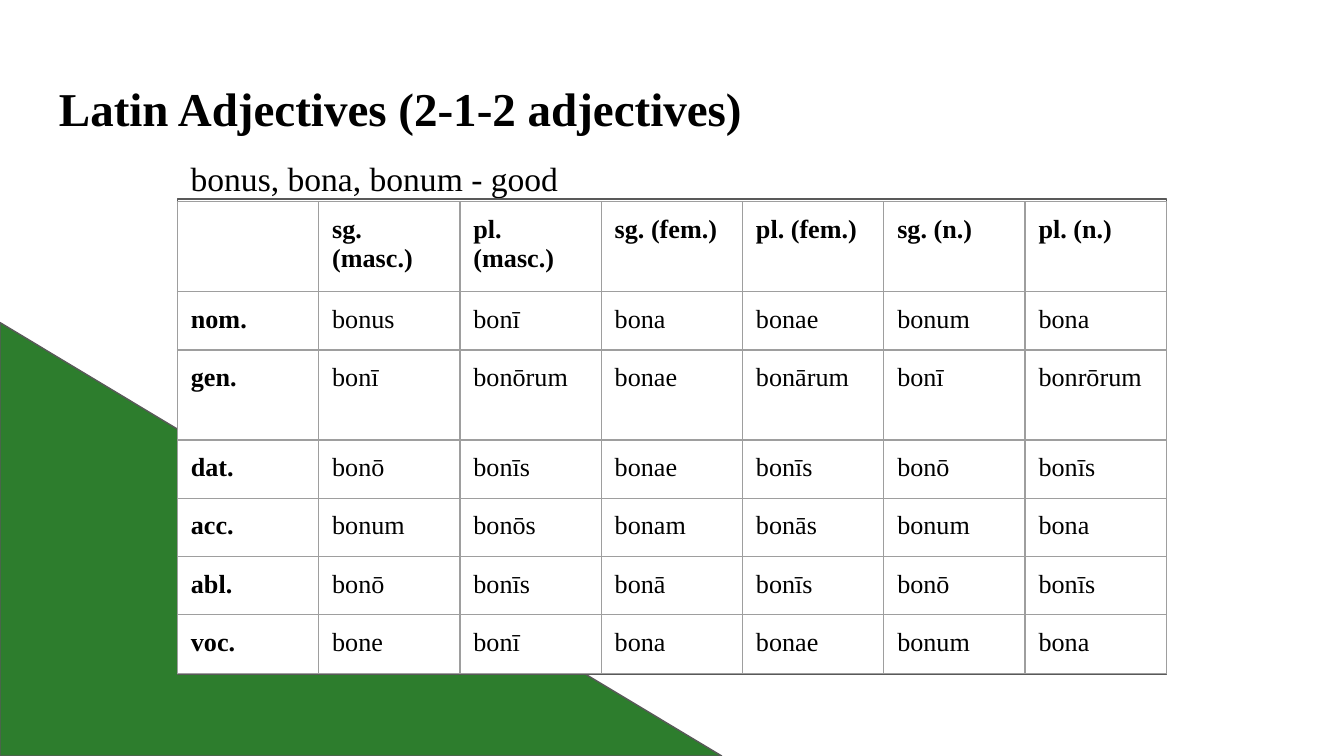
from lxml.etree import SubElement
from pptx import Presentation
from pptx.dml.color import RGBColor
from pptx.enum.shapes import MSO_SHAPE as Shape
from pptx.enum.text import MSO_ANCHOR as Anchor
from pptx.oxml.ns import qn
from pptx.util import Inches, Pt

COLORS = {"green": "2D7D2D", "white": "FFFFFF", "outline": "595959",
          "grid": "9E9E9E", "text": "000000"}
FONT = "Times New Roman"
SLIDE_WIDTH = 10
SLIDE_HEIGHT = SLIDE_WIDTH * 9 / 16
PADDING = 0.1
LINE_WIDTH = 0.75
ROW_HEIGHTS = [0.67, 0.43, 0.67, 0.43, 0.43, 0.43, 0.43]
DECLENSION = [
    ["", "sg. (masc.)", "pl. (masc.)", "sg. (fem.)", "pl. (fem.)", "sg. (n.)", "pl. (n.)"],
    ["nom.", "bonus", "bonī", "bona", "bonae", "bonum", "bona"],
    ["gen.", "bonī", "bonōrum", "bonae", "bonārum", "bonī", "bonrōrum"],
    ["dat.", "bonō", "bonīs", "bonae", "bonīs", "bonō", "bonīs"],
    ["acc.", "bonum", "bonōs", "bonam", "bonās", "bonum", "bona"],
    ["abl.", "bonō", "bonīs", "bonā", "bonīs", "bonō", "bonīs"],
    ["voc.", "bone", "bonī", "bona", "bonae", "bonum", "bona"],
]


def color(key):
    """Return the named colour."""
    return RGBColor.from_string(COLORS[key])


def write_text(frame, text, size=14, bold=False, line_spacing=1.0, space_after=0):
    """Write one formatted paragraph into a text frame."""
    frame.word_wrap = True
    paragraph = frame.paragraphs[0]
    paragraph.line_spacing = line_spacing
    paragraph.space_after = Pt(space_after)
    run = paragraph.add_run()
    run.text = text
    run.font.name = FONT
    run.font.size = Pt(size)
    run.font.bold = bold
    run.font.color.rgb = color("text")


def set_padding(holder):
    """Give a text frame or table cell equal margins."""
    holder.margin_left = holder.margin_right = Inches(PADDING)
    holder.margin_top = holder.margin_bottom = Inches(PADDING)


def add_panel(slide, kind, box, fill):
    """Draw an outlined, filled shape."""
    panel = slide.shapes.add_shape(kind, *map(Inches, box))
    panel.shadow.inherit = False
    panel.fill.solid()
    panel.fill.fore_color.rgb = color(fill)
    panel.line.color.rgb = color("outline")
    panel.line.width = Pt(LINE_WIDTH)


def add_label(slide, box, text, anchor=Anchor.TOP, **text_format):
    """Place a text box."""
    frame = slide.shapes.add_textbox(*map(Inches, box)).text_frame
    frame.vertical_anchor = anchor
    set_padding(frame)
    write_text(frame, text, **text_format)


def add_borders(cell):
    """Give a table cell a thin line on every side."""
    properties = cell._tc.get_or_add_tcPr()
    for side in ("lnL", "lnR", "lnT", "lnB"):
        border = SubElement(properties, qn(f"a:{side}"), w=str(Pt(LINE_WIDTH)))
        fill = SubElement(border, qn("a:solidFill"))
        SubElement(fill, qn("a:srgbClr"), val=COLORS["grid"])


def add_declension(slide, box):
    """Place the declension table on a white panel filling the box."""
    left, top, width, height = box
    add_panel(slide, Shape.RECTANGLE, box, "white")
    column_count = len(DECLENSION[0])
    table = slide.shapes.add_table(
        len(DECLENSION), column_count, Inches(left), Inches(top + 0.02),
        Inches(width), Inches(sum(ROW_HEIGHTS))).table
    for column in table.columns:
        column.width = Inches(width / column_count)
    for row, row_height in zip(table.rows, ROW_HEIGHTS):
        row.height = Inches(row_height)
    for row_index, forms in enumerate(DECLENSION):
        for column_index, form in enumerate(forms):
            cell = table.cell(row_index, column_index)
            add_borders(cell)
            cell.fill.background()
            set_padding(cell)
            if form:
                write_text(cell.text_frame, form,
                           bold=row_index == 0 or column_index == 0)


def main():
    """Build and save the slide."""
    deck = Presentation()
    deck.slide_width, deck.slide_height = Inches(SLIDE_WIDTH), Inches(SLIDE_HEIGHT)
    slide = deck.slides.add_slide(deck.slide_layouts[6])
    add_panel(slide, Shape.RIGHT_TRIANGLE, (0, 2.4, 5.37, SLIDE_HEIGHT - 2.4), "green")
    add_label(slide, (0.34, 0.49, 9.32, 0.63), "Latin Adjectives (2-1-2 adjectives)",
              anchor=Anchor.MIDDLE, size=25.2, bold=True)
    add_label(slide, (1.32, 1.03, 5.22, 3.74), "bonus, bona, bonum - good",
              size=18, line_spacing=1.15, space_after=12)
    add_declension(slide, (1.32, 1.48, 7.36, 3.54))
    deck.save("out.pptx")


if __name__ == "__main__":
    main()
